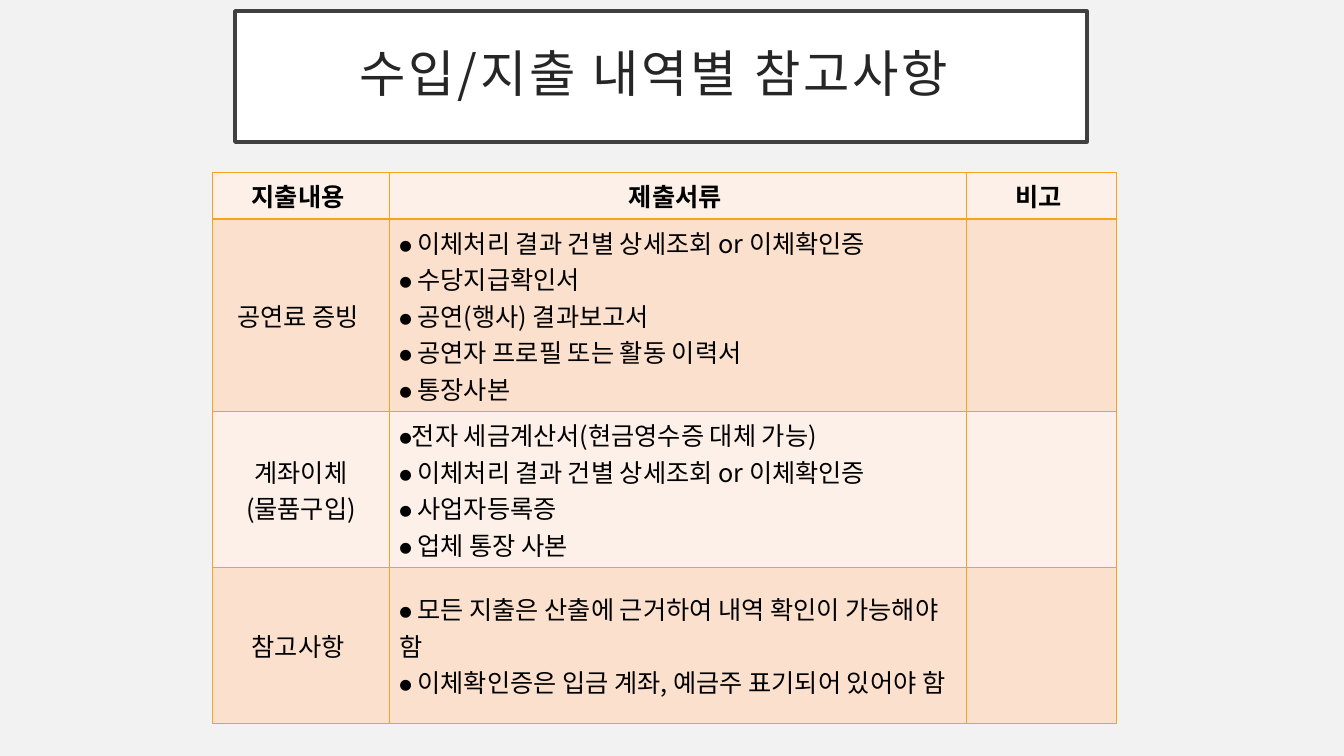
from pptx import Presentation
from pptx.dml.color import RGBColor
from pptx.enum.shapes import MSO_SHAPE
from pptx.enum.text import MSO_ANCHOR, PP_ALIGN
from pptx.oxml.ns import qn
from pptx.util import Inches, Pt
from lxml.etree import SubElement

TITLE = "수입/지출 내역별 참고사항 "
HEADER = ["지출내용 ", "제출서류 ", "비고 "]
# Each row: lines of the expense, lines of the documents, remark lines
ROWS = [
    (["공연료 증빙 "],
     ["⦁ 이체처리 결과 건별 상세조회 or 이체확인증",
      "⦁ 수당지급확인서",
      "⦁ 공연(행사) 결과보고서",
      "⦁ 공연자 프로필 또는 활동 이력서",
      "⦁ 통장사본"], []),
    (["계좌이체", "(물품구입)"],
     ["⦁전자 세금계산서(현금영수증 대체 가능)",
      "⦁ 이체처리 결과 건별 상세조회 or 이체확인증",
      "⦁ 사업자등록증",
      "⦁ 업체 통장 사본"], []),
    (["참고사항 "],
     ["⦁ 모든 지출은 산출에 근거하여 내역 확인이 가능해야 함",
      "⦁ 이체확인증은 입금 계좌, 예금주 표기되어 있어야 함"], []),
]
ROW_LINES = [1, 5, 4, 4]
COLUMN_WIDTHS = [1.75, 5.73, 1.48]
LINE_HEIGHT, CELL_PADDING = 0.36, 0.1

FONT = "Noto Sans CJK KR"
BACKGROUND = RGBColor(0xF2, 0xF2, 0xF2)
WHITE = RGBColor(0xFF, 0xFF, 0xFF)
BLACK = RGBColor(0, 0, 0)
TITLE_TEXT = RGBColor(0x26, 0x26, 0x26)
TITLE_BORDER = RGBColor(0x40, 0x40, 0x40)
GRID_LINE = RGBColor(0xF6, 0xA2, 0x1D)
BANDS = [RGBColor(0xFD, 0xF0, 0xE8), RGBColor(0xFB, 0xE0, 0xCD)]


def write_lines(text_frame, lines, size, color, bold=False, align=PP_ALIGN.LEFT, spacing=0):
    """Write one paragraph per line; spacing is in hundredths of a point."""
    for index, line in enumerate(lines):
        paragraph = text_frame.paragraphs[0] if index == 0 else text_frame.add_paragraph()
        paragraph.alignment = align
        paragraph.add_run().text = line
        font = paragraph.font
        font.name, font.size, font.bold = FONT, Pt(size), bold
        font.color.rgb = color
        properties = paragraph._p.pPr.find(qn("a:defRPr"))
        properties.set("spc", str(spacing))
        SubElement(properties, qn("a:ea")).set("typeface", FONT)


def add_borders(cell):
    properties = cell._tc.get_or_add_tcPr()
    for position, side in enumerate(("a:lnL", "a:lnR", "a:lnT", "a:lnB")):
        line = properties.makeelement(qn(side), {"w": str(Pt(1))})
        fill = SubElement(line, qn("a:solidFill"))
        SubElement(fill, qn("a:srgbClr")).set("val", str(GRID_LINE))
        properties.insert(position, line)


def add_title(slide):
    box = slide.shapes.add_shape(MSO_SHAPE.RECTANGLE, Inches(2.33), Inches(0.11),
                                 Inches(8.45), Inches(1.3))
    box.shadow.inherit = False
    box.fill.solid()
    box.fill.fore_color.rgb = WHITE
    box.line.color.rgb = TITLE_BORDER
    box.line.width = Pt(2.5)
    frame = box.text_frame
    frame.word_wrap = True
    frame.vertical_anchor = MSO_ANCHOR.MIDDLE
    frame.margin_left = frame.margin_right = Inches(0.2)
    frame.margin_top = frame.margin_bottom = Inches(0.2)
    write_lines(frame, [TITLE], 36, TITLE_TEXT, align=PP_ALIGN.CENTER, spacing=200)
    frame.paragraphs[0].line_spacing = 0.9


def add_expense_table(slide):
    heights = [lines * LINE_HEIGHT + CELL_PADDING for lines in ROW_LINES]
    table = slide.shapes.add_table(
        len(heights), len(COLUMN_WIDTHS), Inches(2.11), Inches(1.71),
        Inches(sum(COLUMN_WIDTHS)), Inches(sum(heights))).table
    for column, width in zip(table.columns, COLUMN_WIDTHS):
        column.width = Inches(width)
    for row, height in zip(table.rows, heights):
        row.height = Inches(height)

    contents = [[[label] for label in HEADER], *ROWS]
    for row_index, row in enumerate(contents):
        is_header = row_index == 0
        for column_index, lines in enumerate(row):
            cell = table.cell(row_index, column_index)
            cell.fill.solid()
            cell.fill.fore_color.rgb = BANDS[row_index % 2]
            add_borders(cell)
            cell.vertical_anchor = MSO_ANCHOR.TOP if is_header else MSO_ANCHOR.MIDDLE
            is_list = column_index == 1 and not is_header
            write_lines(cell.text_frame, lines, 18, BLACK, bold=is_header,
                        align=PP_ALIGN.LEFT if is_list else PP_ALIGN.CENTER)


def main():
    presentation = Presentation()
    presentation.slide_width, presentation.slide_height = Inches(13.33), Inches(7.5)
    slide = presentation.slides.add_slide(presentation.slide_layouts[6])
    slide.background.fill.solid()
    slide.background.fill.fore_color.rgb = BACKGROUND
    add_title(slide)
    add_expense_table(slide)
    presentation.save("out.pptx")


if __name__ == "__main__":
    main()
